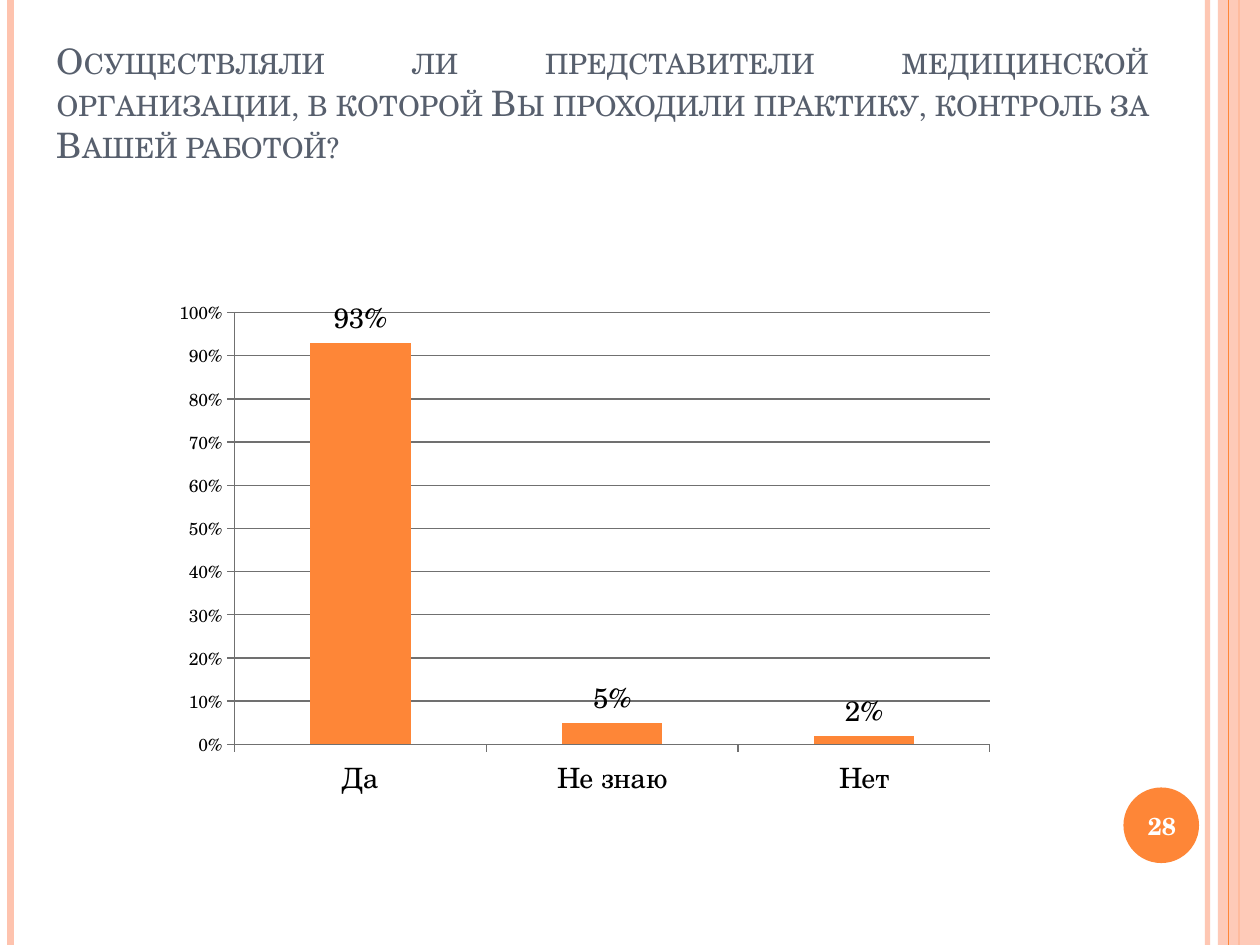
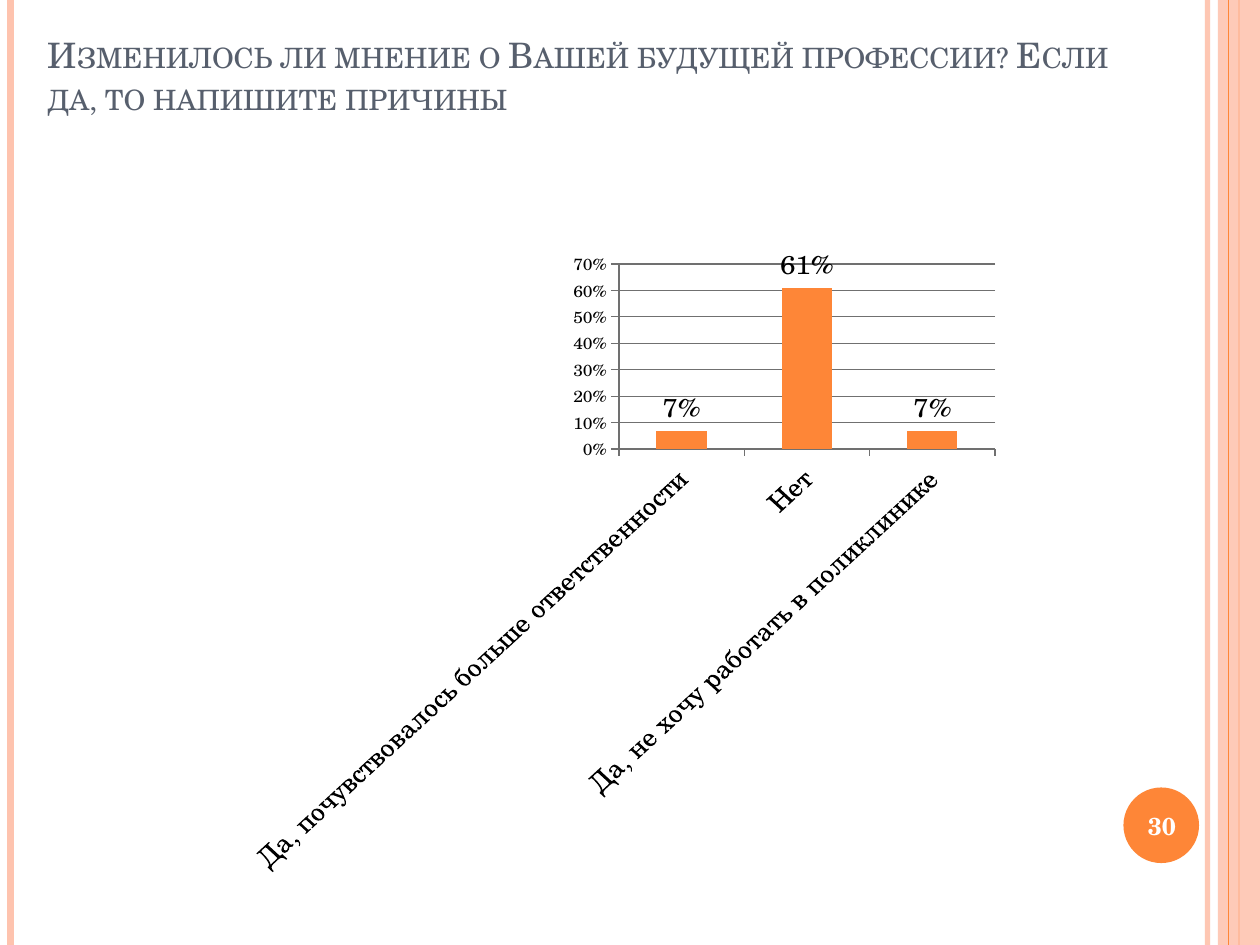
import pptx
import pptx.chart.data
import pptx.dml.color
import pptx.enum.chart
import pptx.enum.shapes
import pptx.enum.text
import pptx.oxml
import pptx.oxml.ns
import pptx.util
from lxml import etree

Pt = pptx.util.Pt
RGBColor = pptx.dml.color.RGBColor
ALIGN = pptx.enum.text.PP_ALIGN
ANCHOR = pptx.enum.text.MSO_ANCHOR
SHAPE = pptx.enum.shapes.MSO_SHAPE

# Shared look
FONT = "TeX Gyre Schola"
ORANGE = RGBColor(0xFE, 0x86, 0x37)
PEACH = RGBColor(0xFE, 0xC3, 0xAE)
SLATE = RGBColor(0x57, 0x5F, 0x6D)
GRAY = RGBColor(0x70, 0x70, 0x70)
WHITE = RGBColor(0xFF, 0xFF, 0xFF)
BLACK = RGBColor(0, 0, 0)
PAGE_WIDTH, PAGE_HEIGHT = 720, 540
TITLE_ONLY = 5


def points(*lengths):
    return [Pt(length) for length in lengths]


def set_opacity(shape, percent):
    """Apply opacity to the only solid colour of a shape."""
    color = next(shape._element.spPr.iter(pptx.oxml.ns.qn("a:srgbClr")))
    alpha = etree.SubElement(color, pptx.oxml.ns.qn("a:alpha"))
    alpha.set("val", str(percent * 1000))


def style_font(font, size, color, bold=False):
    font.name = FONT
    font.size = Pt(size)
    font.color.rgb = color
    font.bold = bold


def add_vertical_line(page, x, width, color):
    line = page.shapes.add_connector(
        pptx.enum.shapes.MSO_CONNECTOR.STRAIGHT, *points(x, 0, x, PAGE_HEIGHT))
    line.line.color.rgb = color
    line.line.width = Pt(width)
    etree.SubElement(line._element.spPr, pptx.oxml.ns.qn("a:effectLst"))
    return line


def add_plain_shape(page, kind, frame, color):
    shape = page.shapes.add_shape(kind, *points(*frame))
    shape.shadow.inherit = False
    shape.fill.solid()
    shape.fill.fore_color.rgb = color
    shape.line.fill.background()
    return shape


def add_side_bands(page):
    set_opacity(add_vertical_line(page, 690, 3, PEACH), 93)
    add_vertical_line(page, 6, 4.5, PEACH)
    add_vertical_line(page, 708, 1.5, ORANGE)
    band = add_plain_shape(page, SHAPE.RECTANGLE,
                           (696, 0, PAGE_WIDTH - 696, PAGE_HEIGHT), PEACH)
    set_opacity(band, 87)
    add_vertical_line(page, 702, 0.75, ORANGE)


def add_page_number(page, number):
    add_plain_shape(page, SHAPE.OVAL, (642, 450, 43.2, 43.2), ORANGE)
    box = page.shapes.add_textbox(*points(640, 451.2, 48, 41))
    frame = box.text_frame
    frame.word_wrap = True
    frame.vertical_anchor = ANCHOR.MIDDLE
    frame.text = str(number)
    frame.paragraphs[0].alignment = ALIGN.CENTER
    style_font(frame.paragraphs[0].runs[0].font, 14, WHITE, bold=True)


def set_title(page, text, place, alignment):
    title = page.shapes.title
    title.left, title.top, title.width, title.height = points(*place)
    frame = title.text_frame
    frame.text = text
    frame.word_wrap = True
    frame.auto_size = pptx.enum.text.MSO_AUTO_SIZE.SHAPE_TO_FIT_TEXT
    frame.vertical_anchor = ANCHOR.TOP
    paragraph = frame.paragraphs[0]
    paragraph.alignment = alignment
    span = paragraph.runs[0]
    style_font(span.font, 20, SLATE)
    span._r.get_or_add_rPr().set("cap", "small")


def style_axis(axis, size):
    style_font(axis.tick_labels.font, size, BLACK)
    axis.major_tick_mark = pptx.enum.chart.XL_TICK_MARK.OUTSIDE
    axis.minor_tick_mark = pptx.enum.chart.XL_TICK_MARK.NONE
    axis.format.line.color.rgb = GRAY
    axis.format.line.width = Pt(0.75)


def add_answer_chart(page, place, answers, maximum, label_angle):
    data = pptx.chart.data.CategoryChartData(number_format="0%")
    data.categories = list(answers)
    data.add_series("Series 1", list(answers.values()))
    chart = page.shapes.add_chart(
        pptx.enum.chart.XL_CHART_TYPE.COLUMN_CLUSTERED, *points(*place), data).chart
    chart.has_legend = False
    chart.has_title = False
    style_font(chart.font, 10, BLACK)

    # Columns and their labels
    plot = chart.plots[0]
    plot.gap_width = 150
    plot.vary_by_categories = False
    series = plot.series[0]
    series.format.fill.solid()
    series.format.fill.fore_color.rgb = ORANGE
    labels = series.data_labels
    labels.show_value = True
    labels.position = pptx.enum.chart.XL_LABEL_POSITION.OUTSIDE_END
    labels.number_format = "0%"
    labels.number_format_is_linked = False
    style_font(labels.font, 16, BLACK)

    # Axes
    style_axis(chart.category_axis, 16)
    body = chart.category_axis._element.find(
        pptx.oxml.ns.qn("c:txPr")).find(pptx.oxml.ns.qn("a:bodyPr"))
    body.set("rot", str(label_angle * 60000))
    axis = chart.value_axis
    style_axis(axis, 10)
    axis.minimum_scale = 0
    axis.maximum_scale = maximum
    axis.major_unit = 0.1
    axis.tick_labels.number_format = "0%"
    axis.tick_labels.number_format_is_linked = False
    axis.has_major_gridlines = True
    axis.major_gridlines.format.line.color.rgb = GRAY
    axis.major_gridlines.format.line.width = Pt(0.75)


def add_question_page(deck, number):
    page = deck.slides.add_slide(deck.slide_layouts[TITLE_ONLY])
    add_side_bands(page)
    add_page_number(page, number)
    return page


def main():
    deck = pptx.Presentation()
    deck.slide_width, deck.slide_height = points(PAGE_WIDTH, PAGE_HEIGHT)

    # Supervision during the internship
    page = add_question_page(deck, 28)
    set_title(page,
              "Осуществляли ли представители медицинской организации, "
              "в которой Вы проходили практику, контроль за Вашей работой?",
              (25.2, 18.7, 638.6, 80), ALIGN.JUSTIFY)
    add_answer_chart(page, (92.9, 165.6, 482.4, 296),
                     {"Да": 0.93, "Не знаю": 0.05, "Нет": 0.02},
                     maximum=1, label_angle=0)

    # Opinion of the future profession
    page = add_question_page(deck, 30)
    set_title(page,
              "Изменилось ли мнение о Вашей будущей профессии? "
              "Если да, то напишите причины",
              (20.2, 15.8, 644.4, 55.4), ALIGN.LEFT)
    add_answer_chart(page, (131.8, 140.4, 445.7, 359.3),
                     {"Да, почувствовалось больше ответственности": 0.07,
                      "Нет": 0.61,
                      "Да, не хочу работать в поликлинике": 0.07},
                     maximum=0.7, label_angle=-45)

    deck.save("out.pptx")


if __name__ == "__main__":
    main()
